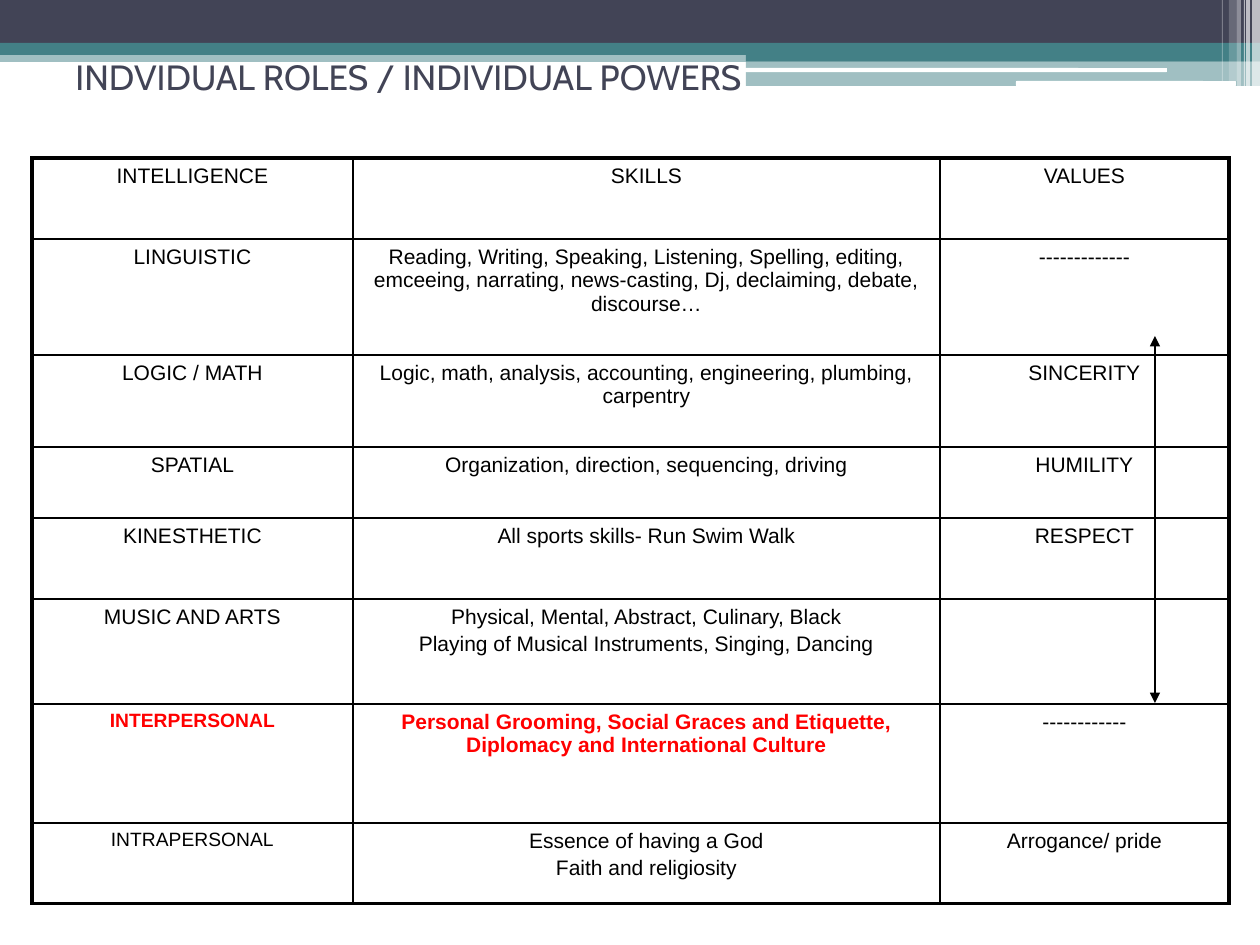
from lxml import etree
from pptx import Presentation
from pptx.dml.color import RGBColor
from pptx.enum.shapes import MSO_CONNECTOR, MSO_SHAPE
from pptx.enum.text import MSO_ANCHOR, PP_ALIGN
from pptx.oxml.ns import qn
from pptx.util import Emu, Pt

RECT, ROUND = MSO_SHAPE.RECTANGLE, MSO_SHAPE.ROUNDED_RECTANGLE
STRAIGHT = MSO_CONNECTOR.STRAIGHT
CENTER, MIDDLE = PP_ALIGN.CENTER, MSO_ANCHOR.MIDDLE

NAVY = RGBColor(0x42, 0x44, 0x56)
TEAL = RGBColor(0x43, 0x80, 0x86)
WHITE = RGBColor(0xFF, 0xFF, 0xFF)
BLACK = RGBColor(0, 0, 0)
RED = RGBColor(0xFF, 0, 0)

PX_PER_INCH = 126
WIDTH, HEIGHT = 1260, 945

# Header bands and rules: left, top, width, height, colour, opacity %, outline
BANDS = [
    (0, 50, 1260, 12, TEAL, 50, RECT),
    (0, 0, 1260, 43, NAVY, 100, RECT),
    (0, 43, 1260, 12, TEAL, 100, RECT),
    (746, 49, 514, 12, TEAL, 100, RECT),
    (746, 61, 514, 25, TEAL, 50, RECT),
    (745, 68, 422, 4, WHITE, 100, ROUND),
    (1016, 81, 220, 5, WHITE, 100, ROUND),
]
# Stripes at the right edge: left, width, height, opacity %
STRIPES = [(1252, 8, 86, 65), (1246, 4, 86, 65), (1244, 1, 86, 60),
           (1237, 4, 86, 40), (1229, 8, 81, 20), (1222, 1, 81, 30)]

COLUMN_WIDTHS = [321, 587, 289]
ROW_HEIGHTS = [81, 116, 92, 71, 81, 105, 119, 81]
ROLES = [
    ("INTELLIGENCE", "SKILLS", "VALUES"),
    ("LINGUISTIC",
     "Reading, Writing, Speaking, Listening, Spelling, editing, emceeing, "
     "narrating, news-casting, Dj, declaiming, debate, discourse…",
     "-------------"),
    ("LOGIC / MATH",
     "Logic, math, analysis, accounting, engineering, plumbing, carpentry",
     "SINCERITY"),
    ("SPATIAL", "Organization, direction, sequencing, driving", "HUMILITY"),
    ("KINESTHETIC", "All sports skills- Run Swim Walk", "RESPECT"),
    ("MUSIC AND ARTS",
     "Physical, Mental, Abstract, Culinary, Black\n"
     "Playing of Musical Instruments, Singing, Dancing", ""),
    ("INTERPERSONAL",
     "Personal Grooming, Social Graces and Etiquette, "
     "Diplomacy and International Culture", "------------"),
    ("INTRAPERSONAL", "Essence of having a God\nFaith and religiosity",
     "Arrogance/ pride"),
]
BODY = {"name": "Arial", "size": Pt(12), "bold": False}
SMALL = {"size": Pt(11)}
STRONG = {"bold": True, "color": RED}
# Cells that differ from the body style, by (row, column)
ACCENTS = {(6, 0): SMALL | STRONG, (6, 1): STRONG, (7, 0): SMALL}


def px(length):
    return Emu(round(length * 914400 / PX_PER_INCH))


class SlideBuilder:
    outer_border, inner_border = Pt(2.25), Pt(1)

    def __init__(self, slide):
        self.shapes = slide.shapes

    def band(self, left, top, width, height, color, opacity, outline):
        band = self.shapes.add_shape(outline, px(left), px(top), px(width), px(height))
        band.shadow.inherit = False
        band.line.fill.background()
        band.fill.solid()
        band.fill.fore_color.rgb = color
        if opacity < 100:
            fill_color = band._element.spPr.find(qn("a:solidFill"))[0]
            etree.SubElement(fill_color, qn("a:alpha"), val=str(opacity * 1000))

    def styled_run(self, paragraph, text, style):
        run = paragraph.add_run()
        run.text = text
        for name, value in style.items():
            if name == "color":
                run.font.color.rgb = value
            else:
                setattr(run.font, name, value)

    def title(self, left, top, width, height, text, style):
        frame = self.shapes.add_textbox(px(left), px(top), px(width), px(height)).text_frame
        frame.word_wrap = True
        frame.vertical_anchor = MIDDLE
        self.styled_run(frame.paragraphs[0], text, style)

    def border(self, cell, side, width):
        line = etree.SubElement(cell._tc.get_or_add_tcPr(), qn(f"a:ln{side}"), w=str(width))
        solid = etree.SubElement(line, qn("a:solidFill"))
        etree.SubElement(solid, qn("a:srgbClr"), val=str(BLACK))

    def table(self, left, top, widths, heights, rows, accents):
        grid = self.shapes.add_table(len(heights), len(widths), px(left), px(top),
                                     px(sum(widths)), px(sum(heights))).table
        grid.first_row = grid.horz_banding = False
        for column, width in zip(grid.columns, widths):
            column.width = px(width)
        for row, height in zip(grid.rows, heights):
            row.height = px(height)
        last_row, last_column = len(heights) - 1, len(widths) - 1
        for r, texts in enumerate(rows):
            for c, text in enumerate(texts):
                cell = grid.cell(r, c)
                edges = {"L": c == 0, "R": c == last_column,
                         "T": r == 0, "B": r == last_row}
                for side, is_outer in edges.items():
                    self.border(cell, side, self.outer_border if is_outer else self.inner_border)
                cell.fill.background()
                style = BODY | {"color": BLACK} | accents.get((r, c), {})
                self.cell_text(cell.text_frame, text, style)

    def cell_text(self, frame, text, style):
        for i, line in enumerate(text.split("\n") if text else []):
            paragraph = frame.add_paragraph() if i else frame.paragraphs[0]
            paragraph.alignment = CENTER
            paragraph.space_before = Pt(style["size"].pt * 0.2)
            self.styled_run(paragraph, line, style)

    def double_arrow(self, x1, y1, x2, y2):
        arrow = self.shapes.add_connector(STRAIGHT, px(x1), px(y1), px(x2), px(y2))
        arrow.line.width = Pt(0.75)
        arrow.line.color.rgb = BLACK
        properties = arrow._element.spPr
        for end in ("a:headEnd", "a:tailEnd"):
            etree.SubElement(properties.find(qn("a:ln")), qn(end), type="triangle")
        etree.SubElement(properties, qn("a:effectLst"))


def main():
    deck = Presentation()
    deck.slide_width, deck.slide_height = px(WIDTH), px(HEIGHT)
    builder = SlideBuilder(deck.slides.add_slide(deck.slide_layouts[6]))

    # Header decoration
    for band in BANDS:
        builder.band(*band)
    for left, width, height, opacity in STRIPES:
        builder.band(left, 0, width, height, WHITE, opacity, RECT)

    # Title
    builder.title(63, 38, 1134, 78, "INDVIDUAL ROLES / INDIVIDUAL POWERS",
                  {"name": "Cabin", "size": Pt(20), "color": NAVY})

    # Roles table and the arrow spanning its values
    builder.table(32, 158, COLUMN_WIDTHS, ROW_HEIGHTS, ROLES, ACCENTS)
    builder.double_arrow(1155, 336, 1155, 703)

    deck.save("out.pptx")


if __name__ == "__main__":
    main()
